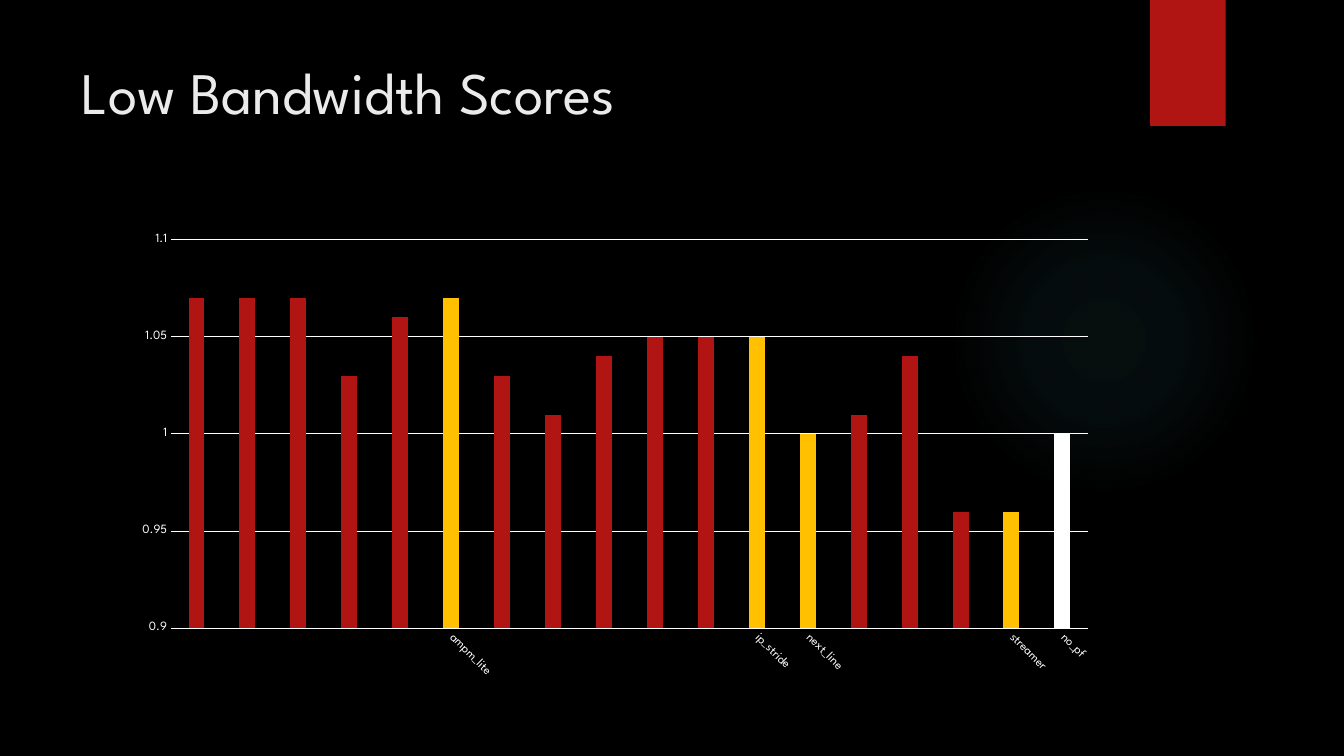
from lxml import etree
from pptx import Presentation
from pptx.chart.data import CategoryChartData
from pptx.dml.color import RGBColor
from pptx.enum.chart import XL_CHART_TYPE as ChartType, XL_TICK_MARK as TickMark
from pptx.enum.shapes import MSO_SHAPE as Preset
from pptx.enum.text import MSO_ANCHOR as Anchor, PP_ALIGN as Align
from pptx.oxml import parse_xml
from pptx.oxml.ns import nsdecls, qn
from pptx.util import Pt

BLACK = RGBColor(0x00, 0x00, 0x00)
WHITE = RGBColor(0xFF, 0xFF, 0xFF)
PALE_GRAY = RGBColor(0xEB, 0xEB, 0xEB)
RED = RGBColor(0xB0, 0x15, 0x13)
GOLD = RGBColor(0xFF, 0xC0, 0x00)
TEAL = RGBColor(0x50, 0xB9, 0xC1)

SCORES = [1.07, 1.07, 1.07, 1.03, 1.06, 1.07, 1.03, 1.01, 1.04,
          1.05, 1.05, 1.05, 1, 1.01, 1.04, 0.96, 0.96, 1]
# Bar position: (label, colour)
NAMED_BARS = {
    5: ("ampm_lite", GOLD),
    11: ("ip_stride", GOLD),
    12: ("next_line", GOLD),
    16: ("streamer", GOLD),
    17: ("no_pf", WHITE),
}
PLOT_AREA = {"x": 0.05, "y": 0.03, "w": 0.93, "h": 0.84}  # shares of the chart
GLOW_STOPS = [(0, 7), (36, 6), (69, 0)]  # position %, opacity %


class SlideBuilder:
    font_name = "League Spartan"

    def __init__(self, slide):
        self.slide = slide
        slide.background.fill.solid()
        slide.background.fill.fore_color.rgb = BLACK

    def format_font(self, font, size, color):
        for name, value in {"name": self.font_name, "size": Pt(size), "bold": False}.items():
            setattr(font, name, value)
        font.color.rgb = color

    def title(self, text, left, top, width, height):
        shape = self.slide.shapes.title
        box = {"left": left, "top": top, "width": width, "height": height}
        for name, value in box.items():
            setattr(shape, name, Pt(value))
        frame = shape.text_frame
        frame.text = text
        frame.word_wrap = True
        frame.vertical_anchor = Anchor.TOP
        paragraph = frame.paragraphs[0]
        paragraph.alignment = Align.LEFT
        self.format_font(paragraph.runs[0].font, 42, PALE_GRAY)

    def block(self, preset, left, top, width, height, color):
        shape = self.slide.shapes.add_shape(preset, Pt(left), Pt(top), Pt(width), Pt(height))
        shape.shadow.inherit = False
        shape.fill.solid()
        shape.fill.fore_color.rgb = color
        shape.line.fill.background()
        return shape

    def glow(self, left, top, diameter, color, stops):
        """Add a circle that fades out from its centre."""
        shape = self.block(Preset.OVAL, left, top, diameter, diameter, color)
        stop_xml = "".join(
            f'<a:gs pos="{position * 1000}"><a:srgbClr val="{color}">'
            f'<a:alpha val="{opacity * 1000}"/></a:srgbClr></a:gs>'
            for position, opacity in stops)
        gradient = parse_xml(
            f'<a:gradFill {nsdecls("a")} rotWithShape="1"><a:gsLst>{stop_xml}</a:gsLst>'
            '<a:path path="circle"><a:fillToRect l="50000" t="50000" r="50000" b="50000"/>'
            '</a:path></a:gradFill>')
        properties = shape.element.spPr
        properties.replace(properties.find(qn("a:solidFill")), gradient)

    def column_chart(self, scores, named_bars, left, top, width, height):
        data = CategoryChartData()
        data.categories = [named_bars.get(index, ("",))[0] for index in range(len(scores))]
        data.add_series("Series 1", scores)
        chart = self.slide.shapes.add_chart(
            ChartType.COLUMN_CLUSTERED, Pt(left), Pt(top), Pt(width), Pt(height), data).chart
        chart.has_legend = False
        chart.has_title = False
        self.format_font(chart.font, 10, WHITE)
        self.place_plot(chart)
        self.format_axes(chart)

        plot = chart.plots[0]
        for name, value in {"gap_width": 219, "overlap": -27, "vary_by_categories": False}.items():
            setattr(plot, name, value)
        series = plot.series[0]
        series.invert_if_negative = False
        series.format.fill.solid()
        series.format.fill.fore_color.rgb = RED
        for index, (_, color) in named_bars.items():
            fill = series.points[index].format.fill
            fill.solid()
            fill.fore_color.rgb = color

    def format_axes(self, chart):
        category_axis, value_axis = chart.category_axis, chart.value_axis
        for axis in (category_axis, value_axis):
            axis.major_tick_mark = axis.minor_tick_mark = TickMark.NONE
            self.format_font(axis.tick_labels.font, 9, WHITE)
        scale = {"minimum_scale": 0.9, "maximum_scale": 1.1, "major_unit": 0.05,
                 "has_major_gridlines": True}
        for name, value in scale.items():
            setattr(value_axis, name, value)
        value_axis.format.line.fill.background()
        for line in (category_axis.format.line, value_axis.major_gridlines.format.line):
            line.color.rgb = WHITE
            line.width = Pt(0.75)
        label_body = category_axis.tick_labels.font._element.getparent().getparent().getparent()
        label_body.find(qn("a:bodyPr")).set("rot", str(45 * 60000))

    def place_plot(self, chart):
        """Fix the inner plot area to PLOT_AREA."""
        plot_area = chart.element.find(".//" + qn("c:plotArea"))
        layout = plot_area.find(qn("c:layout"))
        if layout is None:
            layout = etree.Element(qn("c:layout"))
            plot_area.insert(0, layout)
        manual = etree.SubElement(layout, qn("c:manualLayout"))
        settings = {"layoutTarget": "inner", "xMode": "edge", "yMode": "edge", **PLOT_AREA}
        for name, value in settings.items():
            etree.SubElement(manual, qn(f"c:{name}")).set("val", str(value))


def main():
    presentation = Presentation()
    presentation.slide_width = Pt(960)
    presentation.slide_height = Pt(540)
    builder = SlideBuilder(presentation.slides.add_slide(presentation.slide_layouts[5]))
    builder.glow(677.5, 131.8, 221.8, TEAL, GLOW_STOPS)
    builder.block(Preset.RECTANGLE, 821.5, 0, 54, 90, RED)
    builder.title("Low Bandwidth Scores", 51, 36, 741, 110)
    builder.column_chart(SCORES, NAMED_BARS, 87, 161.3, 704.2, 330.5)
    presentation.save("out.pptx")


if __name__ == "__main__":
    main()
